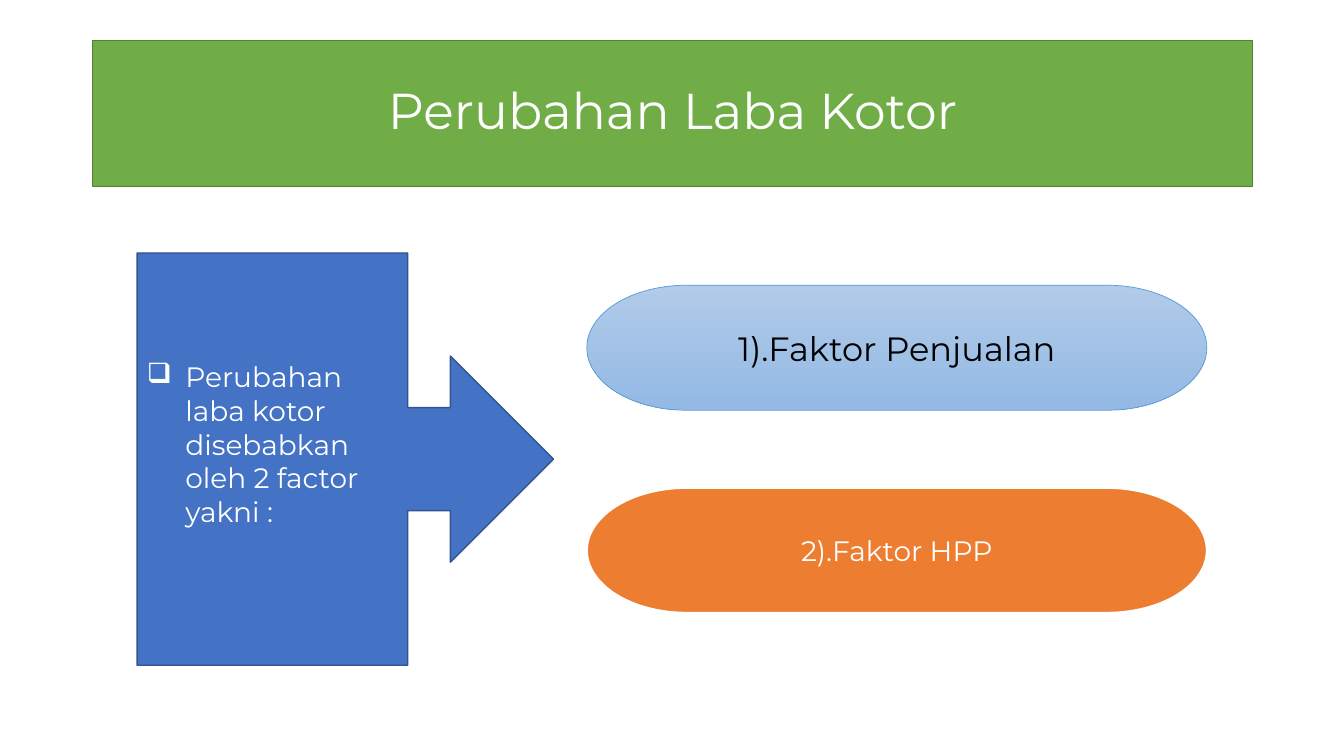
from dataclasses import dataclass

import pptx
import pptx.dml.color
import pptx.enum.shapes
import pptx.enum.text
import pptx.oxml
import pptx.oxml.ns
import pptx.util
from pptx.util import Inches

SHAPE = pptx.enum.shapes.MSO_SHAPE
ALIGN = pptx.enum.text.PP_ALIGN


@dataclass(frozen=True)
class Theme:
    font: str = "Montserrat"
    title_size: int = 36
    large_size: int = 24
    body_size: int = 20
    white: str = "FFFFFF"
    black: str = "000000"
    green: str = "70AD47"
    green_line: str = "538035"
    blue: str = "4472C4"
    blue_line: str = "325491"
    sky_top: str = "B1CBE9"
    sky_bottom: str = "93B9E4"
    sky_line: str = "5B9BD5"
    orange: str = "ED7D31"


THEME = Theme()


def rgb(value):
    return pptx.dml.color.RGBColor.from_string(value)


def write_text(shape, text, *, size=THEME.body_size, color=THEME.white,
               align=ALIGN.CENTER, line_spacing=None, bullet=None, indent=0.38):
    frame = shape.text_frame
    frame.word_wrap = True
    frame.auto_size = pptx.enum.text.MSO_AUTO_SIZE.NONE
    frame.vertical_anchor = pptx.enum.text.MSO_ANCHOR.MIDDLE
    frame.text = text
    paragraph = frame.paragraphs[0]
    paragraph.alignment = align
    if line_spacing:
        paragraph.line_spacing = line_spacing
    if bullet:
        properties = paragraph._p.get_or_add_pPr()
        properties.set("marL", str(Inches(indent)))
        properties.set("indent", str(-Inches(indent)))
        mark = pptx.oxml.parse_xml(
            f'<a:buChar {pptx.oxml.ns.nsdecls("a")} char="{bullet}"/>')
        properties.append(mark)
    font = paragraph.runs[0].font
    font.name = THEME.font
    font.size = pptx.util.Pt(size)
    font.color.rgb = rgb(color)


def paint(shape, fills, line, line_width):
    """Fill with one colour, or with a gradient from top to bottom for two."""
    if len(fills) == 1:
        shape.fill.solid()
        shape.fill.fore_color.rgb = rgb(fills[0])
    else:
        shape.fill.gradient()
        shape.fill.gradient_angle = 270
        for stop, color in zip(shape.fill.gradient_stops, fills):
            stop.color.rgb = rgb(color)
    shape.line.color.rgb = rgb(line)
    shape.line.width = pptx.util.Pt(line_width)


def add_block(slide, kind, box, fills, line, line_width):
    block = slide.shapes.add_shape(kind, *map(Inches, box))
    block.shadow.inherit = False
    paint(block, fills, line, line_width)
    return block


def set_title(slide, text):
    title = slide.shapes.title
    title.left, title.top, title.width, title.height = map(
        Inches, (0.92, 0.4, 11.5, 1.45))
    paint(title, [THEME.green], THEME.green_line, 1)
    write_text(title, text, size=THEME.title_size, line_spacing=0.9)


def add_cause(slide, text):
    cause = add_block(slide, SHAPE.RIGHT_ARROW_CALLOUT, (1.36, 2.51, 4.13, 4.09),
                      [THEME.blue], THEME.blue_line, 1)
    write_text(cause, text, align=ALIGN.LEFT, bullet="❑")
    # The deeper bottom inset lifts the text above the arrow's axis
    cause.text_frame.margin_bottom = Inches(0.35)


def add_factor(slide, row, text, fills, line, line_width, **text_format):
    factor = add_block(slide, SHAPE.FLOWCHART_TERMINATOR,
                       (5.82, 2.83 + row * 2.01, 6.15, 1.24),
                       fills, line, line_width)
    write_text(factor, text, **text_format)


def main():
    deck = pptx.Presentation()
    deck.slide_width, deck.slide_height = Inches(13.33), Inches(7.5)
    slide = deck.slides.add_slide(deck.slide_layouts.get_by_name("Title Only"))

    # Title band
    set_title(slide, "Perubahan Laba Kotor")

    # Statement pointing to the factors
    add_cause(slide, "Perubahan laba kotor disebabkan oleh 2 factor yakni :")

    # The two factors
    add_factor(slide, 0, "1).Faktor Penjualan", [THEME.sky_top, THEME.sky_bottom],
               THEME.sky_line, 0.5, size=THEME.large_size, color=THEME.black)
    add_factor(slide, 1, "2).Faktor HPP", [THEME.orange], THEME.white, 1.5)

    deck.save("out.pptx")


if __name__ == "__main__":
    main()
